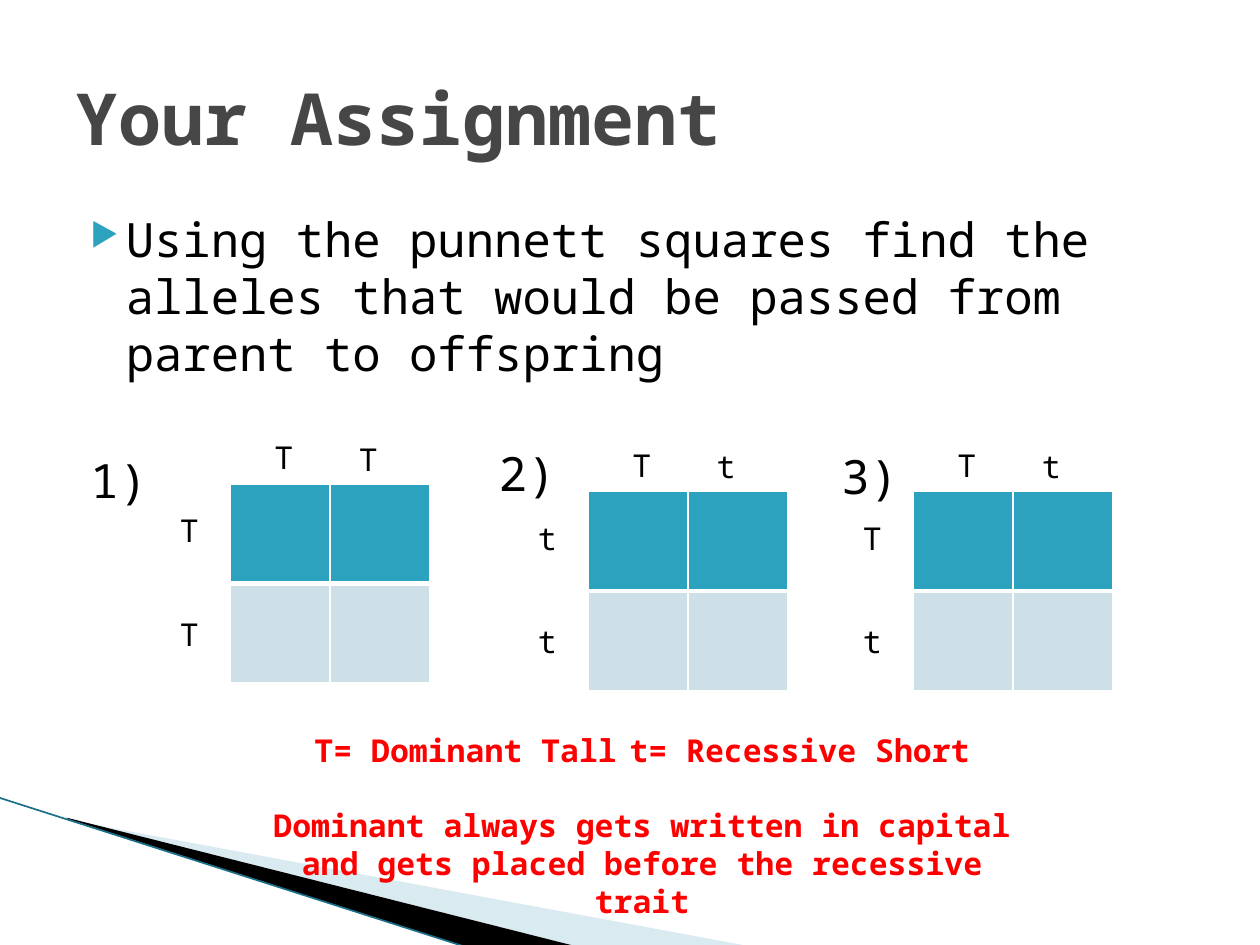
from lxml import etree
from pptx import Presentation
from pptx import util as u
from pptx.dml.color import RGBColor
from pptx.enum import shapes, text
from pptx.oxml.ns import qn

FONT = "Noto Sans Mono"
SQUARES = [
    (1.83, 3.84, "TT", "TT"),
    (4.67, 3.9, "Tt", "tt"),
    (7.25, 3.9, "Tt", "Tt"),
]
CELL = 0.79
ALLELE_OFFSETS = [(0.25, -0.41), (0.92, -0.4), (-0.5, 0.17), (-0.5, 0.99)]


def color(value):
    """Turn a hex string into a colour."""
    return RGBColor.from_string(value)


def child(parent, tag, **attributes):
    """Append an XML element with the given attributes."""
    return etree.SubElement(parent, qn(tag), attributes)


def style(para, size, value="000000", bold=False):
    """Set the font of a paragraph."""
    font = para.font
    font.name, font.size, font.bold = FONT, u.Pt(size), bold
    font.color.rgb = color(value)


def add_text(page, place, lines, size, value="000000", bold=False, wrap=True):
    """Add a text box with one paragraph a line."""
    box = page.shapes.add_textbox(*map(u.Inches, place))
    frame = box.text_frame
    frame.word_wrap = wrap
    frame.text = "\n".join(lines)
    for para in frame.paragraphs:
        style(para, size, value, bold)
    return frame


def add_wedge(page, points, value, opacity=100):
    """Add a filled outline without a border."""
    start, *rest = [(u.Inches(x), u.Inches(y)) for x, y in points]
    builder = page.shapes.build_freeform(*start)
    builder.add_line_segments(rest, close=True)
    wedge = builder.convert_to_shape()
    wedge.shadow.inherit = False
    wedge.fill.solid()
    wedge.fill.fore_color.rgb = color(value)
    wedge.line.fill.background()
    if opacity < 100:
        fill = wedge.fill._xPr.find(qn("a:solidFill"))
        child(fill[0], "a:alpha", val=str(opacity * 1000))


def add_line(page, start, end, value, width):
    """Add a straight line."""
    ends = [u.Inches(length) for length in (*start, *end)]
    line = page.shapes.add_connector(shapes.MSO_CONNECTOR.STRAIGHT, *ends)
    line.line.color.rgb = color(value)
    line.line.width = u.Pt(width)
    child(line._element.spPr, "a:effectLst")


def add_bullet(para, value):
    """Give a paragraph a coloured triangle bullet and a hanging indent."""
    props = para._p.get_or_add_pPr()
    props.set("marL", str(u.Inches(0.4)))
    props.set("indent", str(u.Inches(-0.28)))
    child(child(props, "a:buClr"), "a:srgbClr", val=value)
    child(props, "a:buSzPct", val="68000")
    child(props, "a:buChar", char="▶")


def set_cell(cell, value, top, bottom):
    """Fill a cell and give it white borders."""
    props = cell._tc.get_or_add_tcPr()
    for side, width in zip("LRTB", (1, 1, top, bottom)):
        border = child(props, f"a:ln{side}", w=str(u.Pt(width)))
        child(child(border, "a:solidFill"), "a:srgbClr", val="FFFFFF")
    cell.fill.solid()
    cell.fill.fore_color.rgb = color(value)


def add_punnett(page, left, top, across, down):
    """Add an empty Punnett square with its parent alleles."""
    place = map(u.Inches, (left, top, 2 * CELL, 2 * CELL))
    table = page.shapes.add_table(2, 2, *place).table
    for column in range(2):
        set_cell(table.cell(0, column), "2DA2BF", 1, 3)
        set_cell(table.cell(1, column), "CDE0E8", 3, 1)
    for allele, (x, y) in zip(across + down, ALLELE_OFFSETS):
        width = 0.36 if allele == "T" else 0.3
        add_text(page, (left + x, top + y, width, 0.4), [allele], 18, wrap=False)


def add_body(page):
    """Add the instruction and the first question number."""
    task = ("Using the punnett squares find the alleles that would be "
            "passed from parent to offspring")
    frame = add_text(page, (0.5, 1.62, 9, 4.95), [task, "1)"], 27)
    instruction, number = frame.paragraphs
    add_bullet(instruction, "2DA2BF")
    style(instruction, 27)
    number._p.get_or_add_pPr().set("marL", str(u.Inches(0.12)))
    number.space_before = u.Pt(40.5)


def main():
    """Build the slide and save it."""
    deck = Presentation()
    deck.slide_width, deck.slide_height = u.Inches(10), u.Inches(7.5)
    page = deck.slides.add_slide(deck.slide_layouts[6])

    add_wedge(page, [(0.55, 6.51), (5.95, 7.51), (4.56, 7.51), (0.55, 6.5)],
              "A0CBDC", 40)
    add_wedge(page, [(0.53, 6.49), (4.57, 7.51), (3.72, 7.52), (0.54, 6.5)],
              "000000")
    add_line(page, (-0.01, 6.33), (3.71, 7.52), "186F86", 0.95)

    add_body(page)
    title = add_text(page, (0.5, 0.3, 9, 1.25), ["Your Assignment"], 41,
                     "464646", True)
    title.vertical_anchor = text.MSO_ANCHOR.MIDDLE

    for square in SQUARES:
        add_punnett(page, *square)
    add_text(page, (3.86, 3.48, 0.67, 0.56), ["2)"], 27)
    add_text(page, (6.58, 3.5, 0.67, 0.56), ["3)"], 27)

    legend = add_text(page, (1.94, 5.75, 6.31, 1.31), [
        "T= Dominant Tall\tt= Recessive Short",
        "Dominant always gets written in capital and gets placed before "
        "the recessive trait",
    ], 18, "FF0000", True)
    for para in legend.paragraphs:
        para.alignment = text.PP_ALIGN.CENTER
    legend.paragraphs[1].space_before = u.Pt(21.5)

    deck.save("out.pptx")


if __name__ == "__main__":
    main()
